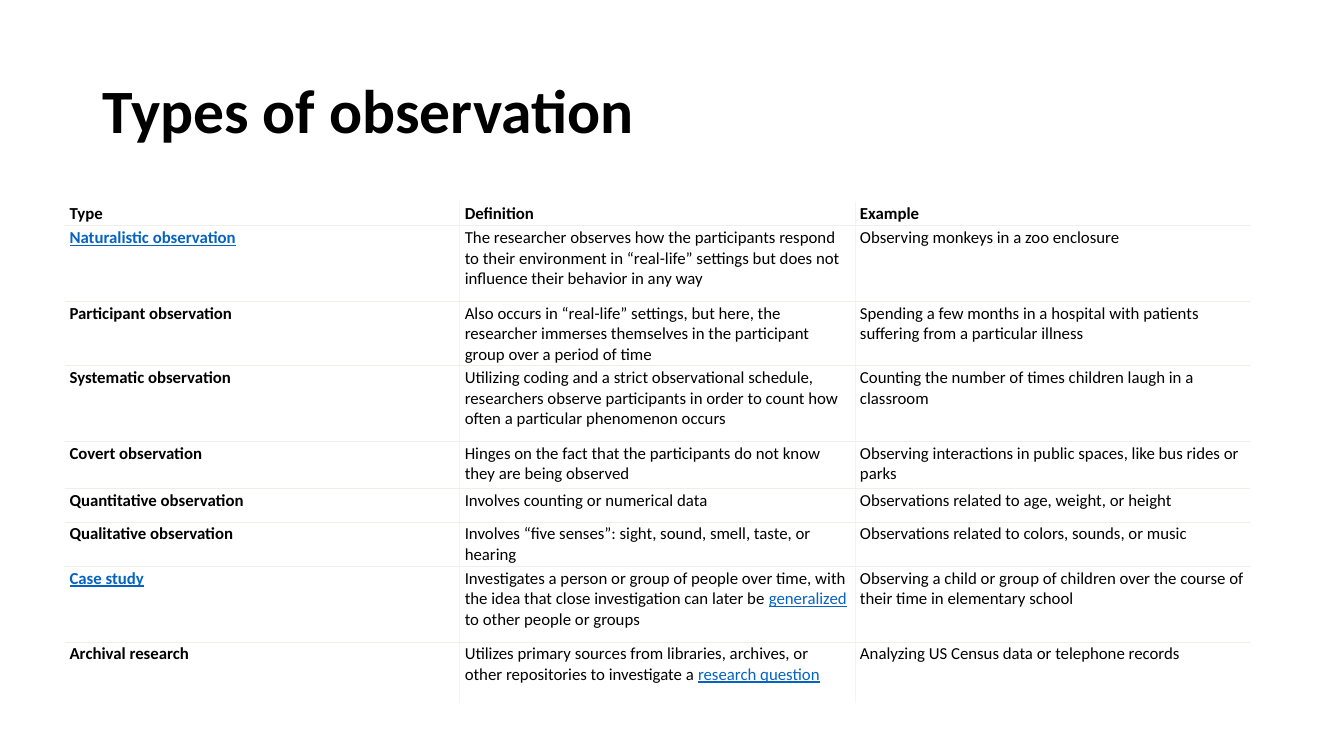
import lxml.etree
import pptx
import pptx.dml.color
import pptx.enum.text
import pptx.oxml.ns
import pptx.util

Inches = pptx.util.Inches
Pt = pptx.util.Pt
qn = pptx.oxml.ns.qn

COLORS = {
    "text": "000000",
    "link": "0563C1",
    "cell": "FFFFFF",
    "row_line": "EFEEE9",
    "column_line": "F6F4F1",
}
FONT = "Calibri"
COLUMN_WIDTH = 3.92
ROW_HEIGHTS = [0.19, 0.75, 0.61, 0.75, 0.47, 0.33, 0.33, 0.75, 0.61]

# Square brackets mark text in link style.
ROWS = [
    ("Type", "Definition", "Example"),
    ("[Naturalistic observation]",
     "The researcher observes how the participants respond to their environment in "
     "“real-life” settings but does not influence their behavior in any way",
     "Observing monkeys in a zoo enclosure"),
    ("Participant observation",
     "Also occurs in “real-life” settings, but here, the researcher immerses "
     "themselves in the participant group over a period of time",
     "Spending a few months in a hospital with patients suffering from a particular illness"),
    ("Systematic observation",
     "Utilizing coding and a strict observational schedule, researchers observe "
     "participants in order to count how often a particular phenomenon occurs",
     "Counting the number of times children laugh in a classroom"),
    ("Covert observation",
     "Hinges on the fact that the participants do not know they are being observed",
     "Observing interactions in public spaces, like bus rides or parks"),
    ("Quantitative observation",
     "Involves counting or numerical data",
     "Observations related to age, weight, or height"),
    ("Qualitative observation",
     "Involves “five senses”: sight, sound, smell, taste, or hearing",
     "Observations related to colors, sounds, or music"),
    ("[Case study]",
     "Investigates a person or group of people over time, with the idea that close "
     "investigation can later be [generalized] to other people or groups",
     "Observing a child or group of children over the course of their time in elementary school"),
    ("Archival research",
     "Utilizes primary sources from libraries, archives, or other repositories to "
     "investigate a [research question]",
     "Analyzing US Census data or telephone records"),
]


def rgb(name):
    return pptx.dml.color.RGBColor.from_string(COLORS[name])


def write_text(p, text, size=12, bold=False):
    """Fill a paragraph, with bracketed parts in link style."""
    for i, part in enumerate(text.replace("]", "[").split("[")):
        if not part:
            continue
        is_link = i % 2 == 1
        r = p.add_run()
        r.text = part
        r.font.name = FONT
        r.font.size = Pt(size)
        r.font.bold = bold
        r.font.underline = is_link
        r.font.color.rgb = rgb("link" if is_link else "text")


def add_title(slide, text):
    sp = slide.shapes.add_textbox(Inches(0.92), Inches(0.4), Inches(11.5), Inches(1.45))
    tf = sp.text_frame
    tf.word_wrap = True
    tf.vertical_anchor = pptx.enum.text.MSO_ANCHOR.MIDDLE
    p = tf.paragraphs[0]
    p.line_spacing = 0.9
    write_text(p, text, size=44, bold=True)


def add_border(cell, side, color):
    """Draw one cell side, or hide it when color is None."""
    ln = lxml.etree.SubElement(cell._tc.get_or_add_tcPr(), qn(f"a:ln{side}"), w=str(Pt(0.75)))
    if color is None:
        lxml.etree.SubElement(ln, qn("a:noFill"))
    else:
        fill = lxml.etree.SubElement(ln, qn("a:solidFill"))
        lxml.etree.SubElement(fill, qn("a:srgbClr"), val=COLORS[color])


def format_cell(cell, row, col, row_count, col_count):
    cell.margin_left = cell.margin_right = Inches(0.05)
    cell.margin_top = cell.margin_bottom = Inches(0.02)
    add_border(cell, "L", "column_line" if col > 0 else None)
    add_border(cell, "R", "column_line" if col < col_count - 1 else None)
    add_border(cell, "T", "row_line" if row > 0 else None)
    add_border(cell, "B", "row_line" if row < row_count - 1 else None)
    cell.fill.solid()
    cell.fill.fore_color.rgb = rgb("cell")


def add_observation_table(slide, rows):
    col_count = len(rows[0])
    frame = slide.shapes.add_table(
        len(rows), col_count, Inches(0.64), Inches(2),
        Inches(COLUMN_WIDTH * col_count), Inches(sum(ROW_HEIGHTS)))
    table = frame.table
    table.horz_banding = False
    for column in table.columns:
        column.width = Inches(COLUMN_WIDTH)
    for i, (texts, height) in enumerate(zip(rows, ROW_HEIGHTS)):
        table.rows[i].height = Inches(height)
        for j, text in enumerate(texts):
            cell = table.cell(i, j)
            format_cell(cell, i, j, len(rows), col_count)
            write_text(cell.text_frame.paragraphs[0], text, bold=i == 0 or j == 0)


def main():
    prs = pptx.Presentation()
    prs.slide_width = Inches(13.33)
    prs.slide_height = Inches(7.5)
    slide = prs.slides.add_slide(prs.slide_layouts[6])
    add_title(slide, "Types of observation")
    add_observation_table(slide, ROWS)
    prs.save("out.pptx")


if __name__ == "__main__":
    main()
